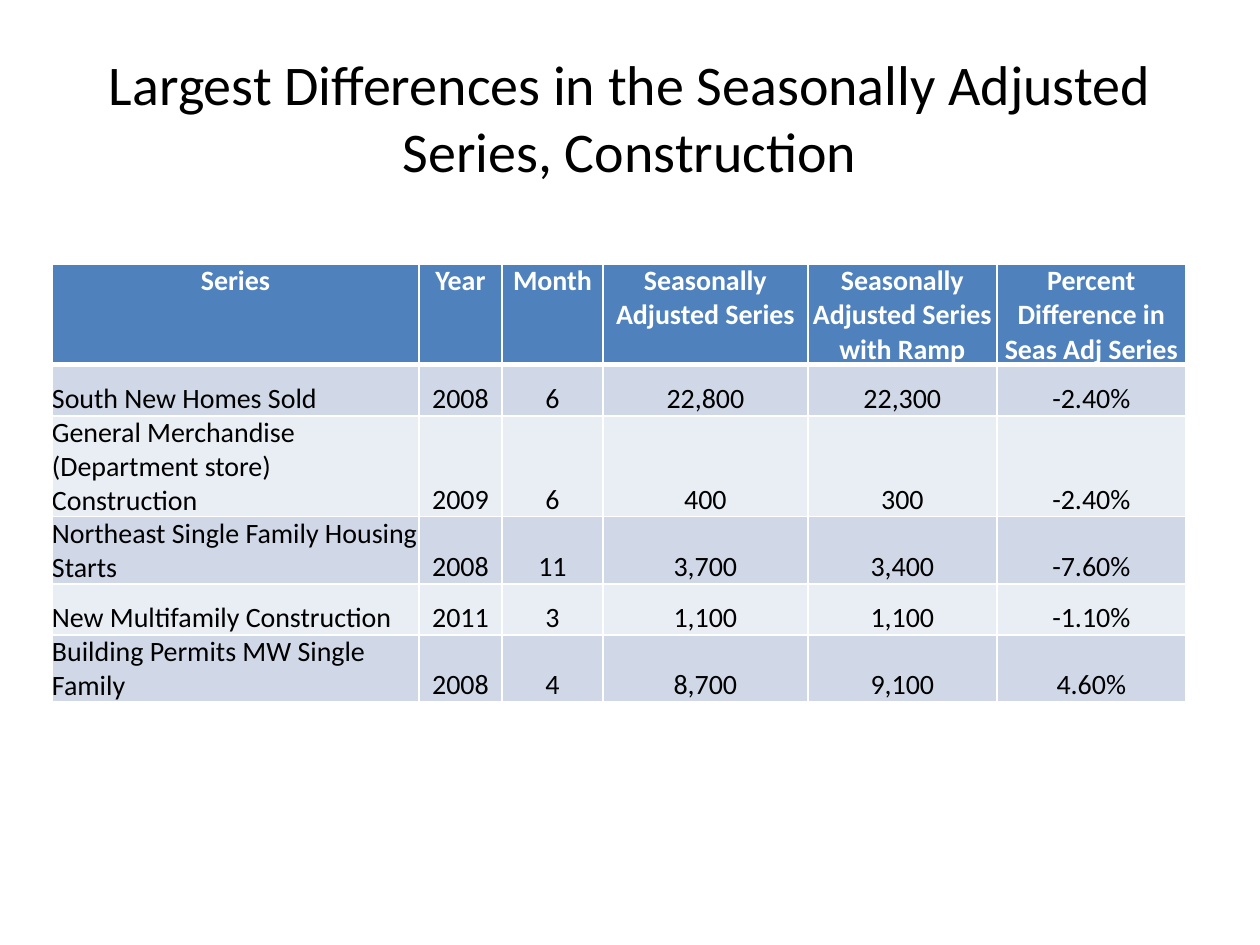
from lxml.etree import SubElement
from pptx import Presentation
from pptx.dml.color import RGBColor
from pptx.enum.text import MSO_ANCHOR, PP_ALIGN
from pptx.oxml.ns import qn
from pptx.util import Emu, Pt

EMU_PER_PX = 914400 // 126
COLORS = {
    "text": "000000",
    "white": "FFFFFF",
    "header": "4F81BD",
    "odd_row": "D0D8E8",
    "even_row": "E9EDF4",
}


def px(length):
    return Emu(length * EMU_PER_PX)


def write_text(text_frame, text, size=16, color="text", bold=False, align=PP_ALIGN.CENTER):
    paragraph = text_frame.paragraphs[0]
    paragraph.alignment = align
    run = paragraph.add_run()
    run.text = text
    run.font.name = "Calibri"
    run.font.size = Pt(size)
    run.font.bold = bold
    run.font.color.rgb = RGBColor.from_string(COLORS[color])


class SlideBuilder:
    def __init__(self, slide):
        self.slide = slide

    def title(self, text, left, top, width, height):
        shape = self.slide.shapes.add_textbox(px(left), px(top), px(width), px(height))
        text_frame = shape.text_frame
        text_frame.word_wrap = True
        text_frame.vertical_anchor = MSO_ANCHOR.MIDDLE
        write_text(text_frame, text, size=32)

    def cell_borders(self, cell, bottom_width):
        properties = cell._tc.get_or_add_tcPr()
        for side, width in (("L", 1), ("R", 1), ("T", 1), ("B", bottom_width)):
            line = SubElement(properties, qn(f"a:ln{side}"), w=str(Pt(width)))
            fill = SubElement(line, qn("a:solidFill"))
            SubElement(fill, qn("a:srgbClr"), val=COLORS["white"])

    def cell(self, cell, text, fill, is_header, align):
        cell.margin_left = cell.margin_right = cell.margin_top = cell.margin_bottom = 0
        cell.vertical_anchor = MSO_ANCHOR.TOP if is_header else MSO_ANCHOR.BOTTOM
        self.cell_borders(cell, bottom_width=3 if is_header else 1)
        cell.fill.solid()
        cell.fill.fore_color.rgb = RGBColor.from_string(COLORS[fill])
        write_text(cell.text_frame, text, color="white" if is_header else "text",
                   bold=is_header, align=align)

    def table(self, rows, left, top, column_widths, row_height):
        frame = self.slide.shapes.add_table(
            len(rows), len(column_widths), px(left), px(top),
            px(sum(column_widths)), px(row_height * len(rows)))
        table = frame.table
        for column, width in zip(table.columns, column_widths):
            column.width = px(width)
        for row_index, row in enumerate(rows):
            is_header = row_index == 0
            fill = "header" if is_header else ("even_row", "odd_row")[row_index % 2]
            for column_index, text in enumerate(row):
                is_name = column_index == 0 and not is_header
                align = PP_ALIGN.LEFT if is_name else PP_ALIGN.CENTER
                self.cell(table.cell(row_index, column_index), text, fill, is_header, align)


def main():
    presentation = Presentation()
    presentation.slide_width = px(1260)
    presentation.slide_height = px(945)
    builder = SlideBuilder(presentation.slides.add_slide(presentation.slide_layouts[6]))

    # Title
    builder.title("Largest Differences in the Seasonally Adjusted Series, Construction",
                  63, 38, 1134, 157)

    # Table of differences; rows grow to fit their text
    rows = [
        ("Series", "Year", "Month", "Seasonally Adjusted Series",
         "Seasonally Adjusted Series with Ramp", "Percent Difference in Seas Adj Series"),
        ("South New Homes Sold", "2008", "6", "22,800", "22,300", "-2.40%"),
        ("General Merchandise (Department store) Construction",
         "2009", "6", "400", "300", "-2.40%"),
        ("Northeast Single Family Housing Starts", "2008", "11", "3,700", "3,400", "-7.60%"),
        ("New Multifamily Construction", "2011", "3", "1,100", "1,100", "-1.10%"),
        ("Building Permits MW Single Family", "2008", "4", "8,700", "9,100", "4.60%"),
    ]
    builder.table(rows, 52, 264, column_widths=(367, 83, 101, 205, 189, 189), row_height=51)

    presentation.save("out.pptx")


if __name__ == "__main__":
    main()
